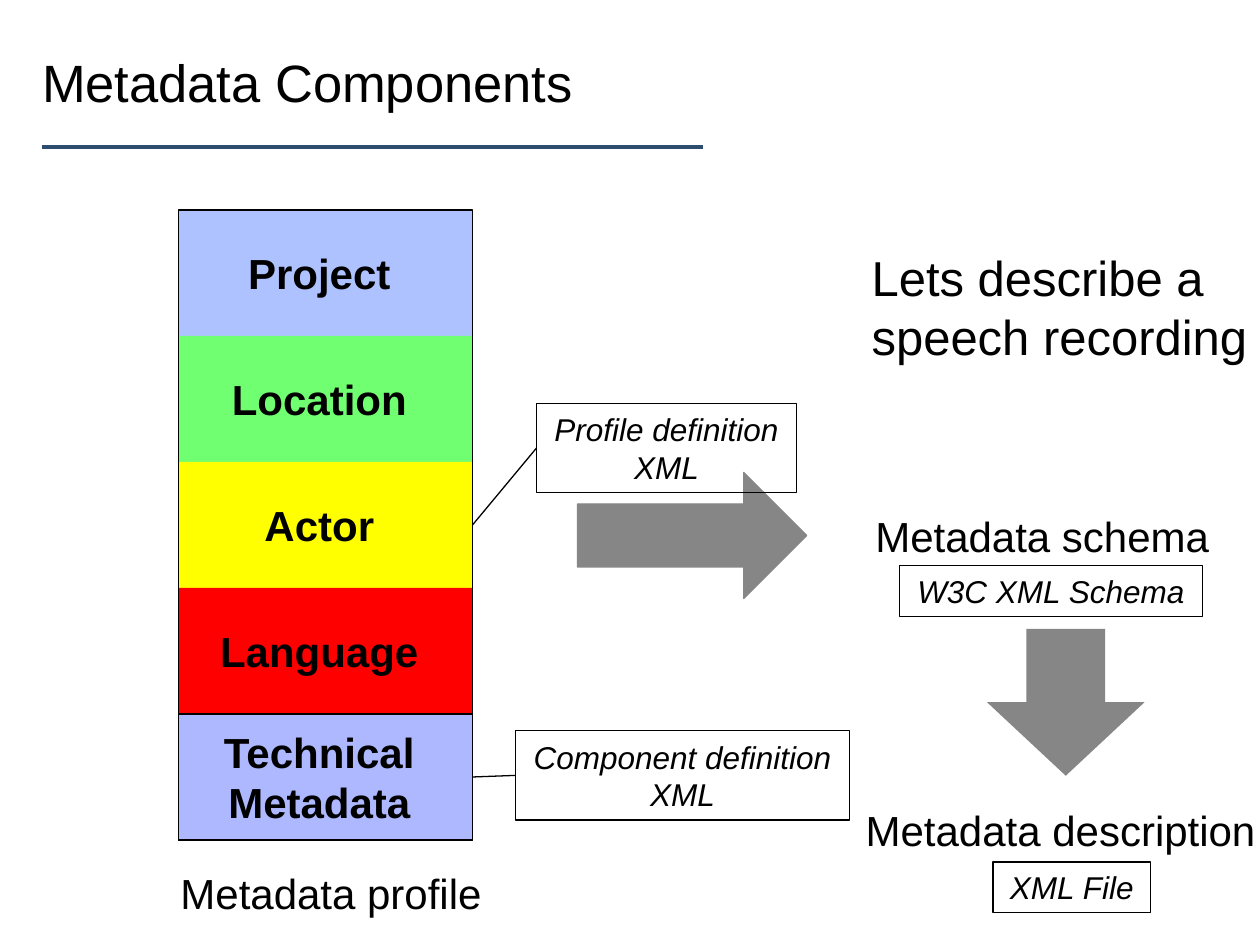
from dataclasses import dataclass
from typing import Optional

from lxml.etree import SubElement
from pptx import Presentation
from pptx.dml.color import RGBColor
from pptx.enum.shapes import MSO_CONNECTOR, MSO_SHAPE
from pptx.enum.text import MSO_ANCHOR, MSO_AUTO_SIZE, PP_ALIGN
from pptx.oxml.ns import qn
from pptx.util import Pt


@dataclass(frozen=True)
class Theme:
    font: str = "Arial"
    ink: str = "000000"
    rule: str = "2D4E6F"
    arrow: str = "868686"
    title: float = 30
    lead: float = 28
    body: float = 24
    note: float = 18
    thin: float = 0.75
    thick: float = 2.25


@dataclass(frozen=True)
class Box:
    left: float
    top: float
    width: float
    height: float

    def points(self) -> tuple:
        return Pt(self.left), Pt(self.top), Pt(self.width), Pt(self.height)


@dataclass(frozen=True)
class Layer:
    text: str
    fill: str
    line: Optional[str] = None


@dataclass(frozen=True)
class Note:
    text: str
    box: Box
    layer: Optional[int] = None


@dataclass(frozen=True)
class Label:
    text: str
    box: Box
    size: float
    align: PP_ALIGN = PP_ALIGN.LEFT


LOOK = Theme()
STACK = Box(102, 120, 168, 72)
LAYERS = [
    Layer("Project", "ADC2FF"),
    Layer("Location", "70FF70"),
    Layer("Actor", "FFFF00"),
    Layer("Language", "FF0000"),
    Layer("Technical\nMetadata", "ADB8FF", LOOK.ink),
]
ARROWS = [
    (MSO_SHAPE.RIGHT_ARROW, Box(330, 270, 131, 72), LOOK.arrow),
    (MSO_SHAPE.DOWN_ARROW, Box(564, 359.3, 90, 84), None),
]
LABELS = [
    Label("Metadata schema", Box(492, 288, 207, 65.5), LOOK.body, PP_ALIGN.CENTER),
    Label("Metadata description", Box(486, 456, 240, 65.5), LOOK.body, PP_ALIGN.CENTER),
    Label("Lets describe a\nspeech recording", Box(491, 138, 231, 75), LOOK.lead),
    Label("Metadata profile", Box(96, 492, 188.6, 36), LOOK.body),
]
NOTES = [
    Note("Component definition\nXML", Box(294.5, 417.6, 191, 51), 4),
    Note("W3C XML Schema", Box(514, 323.3, 173, 29)),
    Note("XML File", Box(567.4, 492.5, 90, 29)),
    Note("Profile definition\nXML", Box(306.7, 230.4, 148.3, 51), 2),
]


def write(shape, text: str, size: float, align=PP_ALIGN.LEFT, anchor=MSO_ANCHOR.MIDDLE,
          bold=False, slant=False, wrap=False, left: float = 7.2) -> None:
    frame = shape.text_frame
    frame.auto_size = MSO_AUTO_SIZE.NONE
    frame.word_wrap = wrap
    frame.vertical_anchor = anchor
    frame.margin_left, frame.margin_right = Pt(left), Pt(7.2)
    frame.margin_top = frame.margin_bottom = Pt(3.6)
    for index, line in enumerate(text.split("\n")):
        para = frame.add_paragraph() if index else frame.paragraphs[0]
        para.alignment = align
        run = para.add_run()
        run.text = line
        run.font.name = LOOK.font
        run.font.size = Pt(size)
        run.font.bold = bold
        run.font.italic = slant
        run.font.color.rgb = RGBColor.from_string(LOOK.ink)


def draw(slide, kind, box: Box, fill: Optional[str] = None, line: Optional[str] = None):
    shape = slide.shapes.add_shape(kind, *box.points())
    shape.shadow.inherit = False
    if fill:
        shape.fill.solid()
        shape.fill.fore_color.rgb = RGBColor.from_string(fill)
    else:
        shape.fill.background()
    if line:
        shape.line.color.rgb = RGBColor.from_string(line)
        shape.line.width = Pt(LOOK.thin)
    else:
        shape.line.fill.background()
    return shape


def link(slide, start: tuple, end: tuple, color: str, width: float):
    line = slide.shapes.add_connector(
        MSO_CONNECTOR.STRAIGHT, *(Pt(value) for value in start + end))
    line.line.color.rgb = RGBColor.from_string(color)
    line.line.width = Pt(width)
    SubElement(line._element.spPr, qn("a:effectLst"))
    return line


def main() -> None:
    deck = Presentation()
    deck.slide_width, deck.slide_height = Pt(720), Pt(540)
    slide = deck.slides.add_slide(deck.slide_layouts[5])

    link(slide, (24, 84), (402, 84), LOOK.rule, LOOK.thick)
    title = slide.shapes.title
    title.left, title.top, title.width, title.height = Box(24, 15, 456, 63.5).points()
    write(title, "Metadata Components", LOOK.title, wrap=True, left=0)

    stack = []
    for index, layer in enumerate(LAYERS):
        top = STACK.top + index * STACK.height
        box = Box(STACK.left, top, STACK.width, STACK.height)
        shape = draw(slide, MSO_SHAPE.RECTANGLE, box, layer.fill, layer.line)
        write(shape, layer.text, LOOK.body, PP_ALIGN.CENTER, bold=True, wrap=True, left=0)
        stack.append(shape)
    frame = Box(STACK.left, STACK.top, STACK.width, STACK.height * len(LAYERS))
    draw(slide, MSO_SHAPE.RECTANGLE, frame, line=LOOK.ink)

    for kind, box, line in ARROWS:
        draw(slide, kind, box, LOOK.arrow, line)

    for label in LABELS:
        shape = slide.shapes.add_textbox(*label.box.points())
        write(shape, label.text, label.size, label.align, MSO_ANCHOR.TOP)

    for note in NOTES:
        shape = draw(slide, MSO_SHAPE.RECTANGLE, note.box, line=LOOK.ink)
        write(shape, note.text, LOOK.note, PP_ALIGN.CENTER, slant=True)
        if note.layer is not None:
            line = link(slide, (0, 0), (0, 0), LOOK.ink, LOOK.thin)
            line.begin_connect(stack[note.layer], 3)
            line.end_connect(shape, 1)

    deck.save("out.pptx")


if __name__ == "__main__":
    main()
